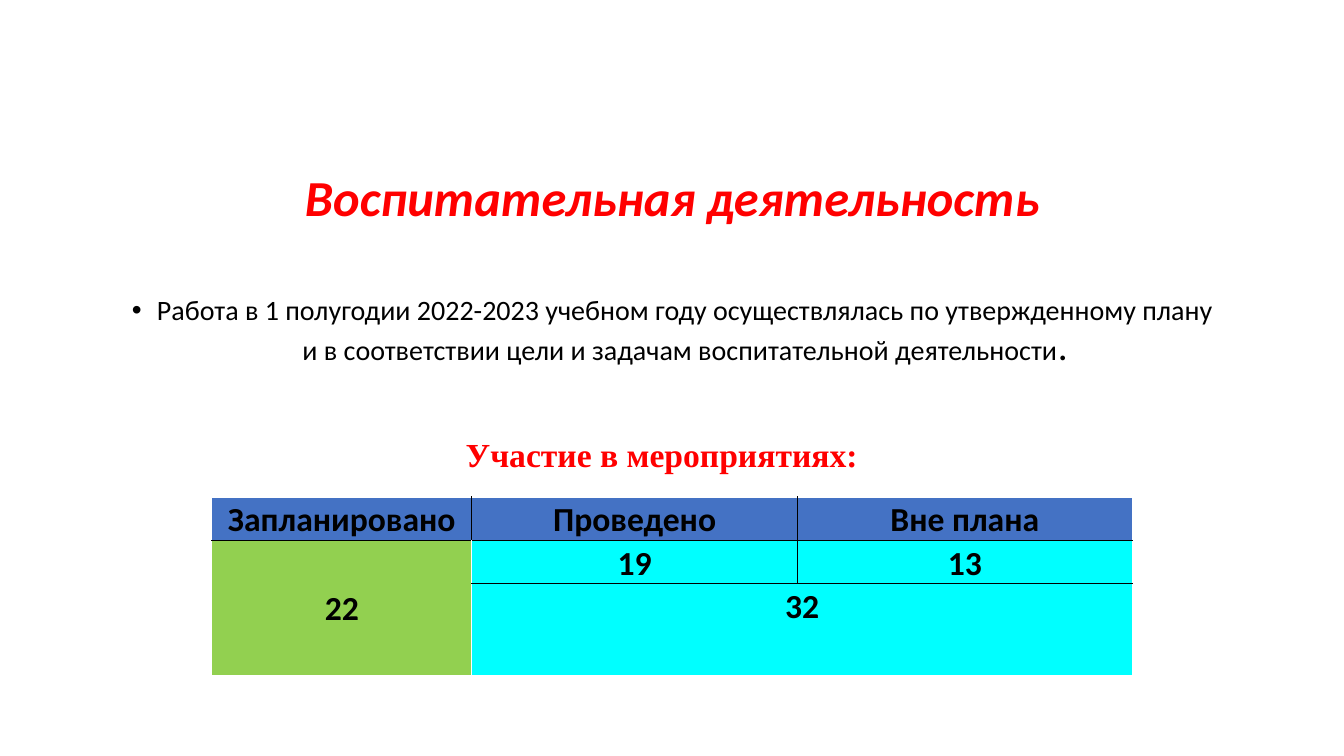
import pptx
import pptx.util
import pptx.dml.color
import pptx.enum.text
import pptx.oxml
import pptx.oxml.ns
from lxml import etree

Inches = pptx.util.Inches
Pt = pptx.util.Pt
RGBColor = pptx.dml.color.RGBColor
ALIGN = pptx.enum.text.PP_ALIGN
ANCHOR = pptx.enum.text.MSO_ANCHOR
AUTO_SIZE = pptx.enum.text.MSO_AUTO_SIZE
qn = pptx.oxml.ns.qn

RED = RGBColor(0xFF, 0, 0)
BLACK = RGBColor(0, 0, 0)
WHITE = RGBColor(0xFF, 0xFF, 0xFF)
BLUE = RGBColor(0x44, 0x72, 0xC4)
GREEN = RGBColor(0x92, 0xD0, 0x50)
CYAN = RGBColor(0, 0xFF, 0xFF)

HEADING = "Воспитательная деятельность"
SUMMARY = [
    ("Работа в 1 полугодии 2022-2023 учебном году осуществлялась по утвержденному плану "
     "и в соответствии цели и задачам воспитательной деятельности", 20),
    (".", 28),
]
PARTICIPATION = "Участие в мероприятиях:"
COUNTS = [
    [("Запланировано", BLUE, "RB"), ("Проведено", BLUE, "LRB"), ("Вне плана", BLUE, "LB")],
    [("22", GREEN, "T"), ("19", CYAN, "TRB"), ("13", CYAN, "TLB")],
    [("", GREEN, ""), ("32", CYAN, "T"), ("", CYAN, "T")],
]
MERGES = [((1, 0), (2, 0)), ((2, 1), (2, 2))]
MIDDLE_CELLS = [(0, 0), (0, 1), (0, 2), (1, 0)]
COLUMN_WIDTHS = [2.58, 3.23, 3.32]
ROW_HEIGHTS = [0.43, 0.43, 0.91]


def place(box, left, top, width, height):
    box.left, box.top = Inches(left), Inches(top)
    box.width, box.height = Inches(width), Inches(height)


def add_run(paragraph, text, size, color, font="Calibri", bold=False, italic=False):
    run = paragraph.add_run()
    run.text = text
    run.font.name = font
    run.font.size = Pt(size)
    run.font.color.rgb = color
    run.font.bold = bold
    run.font.italic = italic


def set_borders(cell, black_sides):
    properties = cell._tc.get_or_add_tcPr()
    for index, side in enumerate("LRTB"):
        line = etree.Element(qn(f"a:ln{side}"), w=str(Pt(1)))
        fill = etree.SubElement(line, qn("a:solidFill"))
        color = BLACK if side in black_sides else WHITE
        etree.SubElement(fill, qn("a:srgbClr"), val=str(color))
        properties.insert(index, line)


def add_heading(slide):
    title = slide.shapes.title
    place(title, 0.92, 1.56, 11.5, 0.85)
    frame = title.text_frame
    frame.auto_size = AUTO_SIZE.NONE
    frame.vertical_anchor = ANCHOR.MIDDLE
    paragraph = frame.paragraphs[0]
    paragraph.alignment = ALIGN.CENTER
    paragraph.line_spacing = 0.9
    add_run(paragraph, HEADING, 36, RED, bold=True, italic=True)


def add_summary(slide):
    body = slide.placeholders[1]
    place(body, 1.11, 2.89, 11.12, 1.14)
    frame = body.text_frame
    frame.auto_size = AUTO_SIZE.NONE
    paragraph = frame.paragraphs[0]
    paragraph.alignment = ALIGN.CENTER
    paragraph.line_spacing = 0.9
    paragraph.space_before = Pt(0)
    properties = paragraph._p.get_or_add_pPr()
    properties.set("marL", str(Inches(0.25)))
    properties.set("indent", str(Inches(-0.25)))
    etree.SubElement(properties, qn("a:buFont"), typeface="Arial")
    etree.SubElement(properties, qn("a:buChar"), char="•")
    for text, size in SUMMARY:
        add_run(paragraph, text, size, BLACK)


def add_participation(slide):
    caption = slide.shapes.add_textbox(Inches(4.52), Inches(4.23), Inches(4.29), Inches(0.5))
    frame = caption.text_frame
    frame.word_wrap = True
    frame.auto_size = AUTO_SIZE.SHAPE_TO_FIT_TEXT
    paragraph = frame.paragraphs[0]
    paragraph.line_spacing = 1.07
    paragraph.space_after = Pt(1.5)
    add_run(paragraph, PARTICIPATION, 24, RED, "Times New Roman", bold=True)


def add_counts(slide):
    counts = slide.shapes.add_table(
        len(ROW_HEIGHTS), len(COLUMN_WIDTHS), Inches(2.1), Inches(4.93),
        Inches(sum(COLUMN_WIDTHS)), Inches(sum(ROW_HEIGHTS))).table
    for column, width in zip(counts.columns, COLUMN_WIDTHS):
        column.width = Inches(width)
    for row, height in zip(counts.rows, ROW_HEIGHTS):
        row.height = Inches(height)
    for first, last in MERGES:
        counts.cell(*first).merge(counts.cell(*last))
    for r, row in enumerate(COUNTS):
        for c, (text, color, black_sides) in enumerate(row):
            cell = counts.cell(r, c)
            cell.fill.solid()
            cell.fill.fore_color.rgb = color
            set_borders(cell, black_sides)
            cell.margin_left = cell.margin_right = Inches(0.07)
            cell.margin_top = cell.margin_bottom = 0
            cell.vertical_anchor = ANCHOR.MIDDLE if (r, c) in MIDDLE_CELLS else ANCHOR.TOP
            if text:
                paragraph = cell.text_frame.paragraphs[0]
                paragraph.alignment = ALIGN.CENTER
                paragraph.line_spacing = 1.07
                add_run(paragraph, text, 24, BLACK, bold=True)


def main():
    deck = pptx.Presentation()
    deck.slide_width, deck.slide_height = Inches(13.33), Inches(7.5)
    slide = deck.slides.add_slide(deck.slide_layouts[1])
    add_heading(slide)
    add_summary(slide)
    add_participation(slide)
    add_counts(slide)
    deck.save("out.pptx")


if __name__ == "__main__":
    main()
